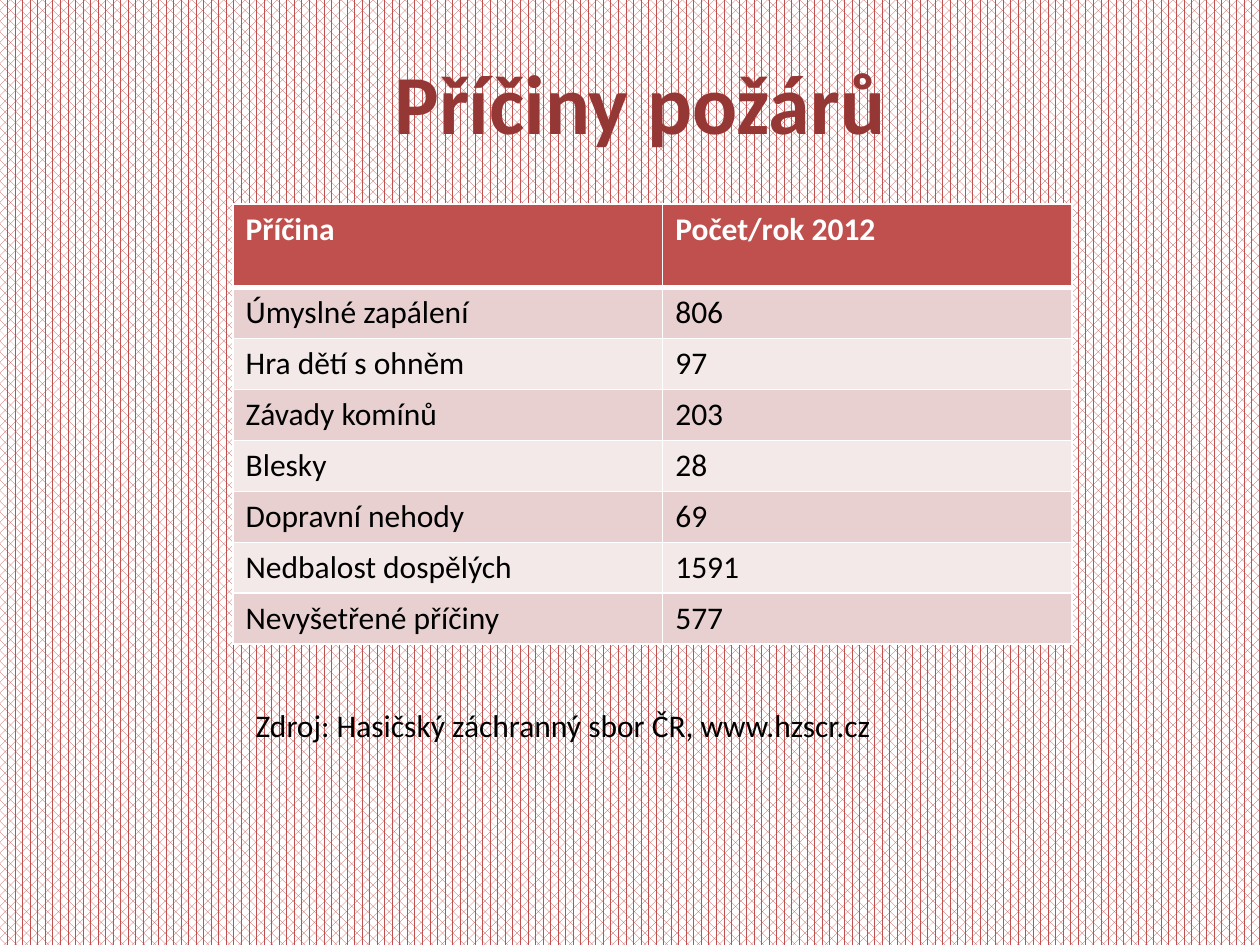
from dataclasses import dataclass

from lxml.etree import SubElement
from pptx import Presentation
from pptx.dml.color import RGBColor as RGB
from pptx.enum.dml import MSO_PATTERN as PATTERN
from pptx.enum.text import MSO_ANCHOR as ANCHOR, PP_ALIGN as ALIGN
from pptx.oxml.ns import qn
from pptx.util import Inches, Pt


@dataclass(frozen=True)
class Theme:
    font: str = "Calibri"
    title_size: int = 48
    body_size: int = 18
    title: str = "953735"
    accent: str = "C0504D"
    bands: tuple = ("E8D0D0", "F4E9E9")
    light: str = "FFFFFF"
    ink: str = "000000"


theme = Theme()


def write(frame, text, size=theme.body_size, color=theme.ink, bold=False,
          align=ALIGN.LEFT, anchor=ANCHOR.TOP):
    frame.word_wrap = True
    frame.vertical_anchor = anchor
    paragraph = frame.paragraphs[0]
    paragraph.alignment = align
    run = paragraph.add_run()
    run.text = text
    run.font.name = theme.font
    run.font.size = Pt(size)
    run.font.bold = bold
    run.font.color.rgb = RGB.from_string(color)


def paint_cell(cell, color, bottom_width):
    cell_format = cell._tc.get_or_add_tcPr()
    for edge, width in (("lnL", 1), ("lnR", 1), ("lnT", 1), ("lnB", bottom_width)):
        line = SubElement(cell_format, qn(f"a:{edge}"), w=str(Pt(width)))
        line_fill = SubElement(line, qn("a:solidFill"))
        SubElement(line_fill, qn("a:srgbClr"), val=theme.light)
    cell.fill.solid()
    cell.fill.fore_color.rgb = RGB.from_string(color)


deck = Presentation()
deck.slide_width, deck.slide_height = Inches(10), Inches(7.5)
W, H = deck.slide_width / 100, deck.slide_height / 100
slide = deck.slides.add_slide(deck.slide_layouts[6])

backdrop = slide.background.fill
backdrop.patterned()
backdrop.pattern = PATTERN.PERCENT_60
backdrop.fore_color.rgb = RGB.from_string(theme.accent)
backdrop.back_color.rgb = RGB.from_string(theme.light)

heading = slide.shapes.add_textbox(int(8.3 * W), int(3.9 * H), int(85 * W), int(13.6 * H))
write(heading.text_frame, "Příčiny požárů", size=theme.title_size, color=theme.title,
      bold=True, align=ALIGN.CENTER, anchor=ANCHOR.MIDDLE)

fire_causes = [
    ("Příčina", "Počet/rok 2012"),
    ("Úmyslné zapálení", "806"),
    ("Hra dětí s ohněm", "97"),
    ("Závady komínů", "203"),
    ("Blesky", "28"),
    ("Dopravní nehody", "69"),
    ("Nedbalost dospělých", "1591"),
    ("Nevyšetřené příčiny", "577"),
]
column_shares = (34.1, 32.5)
header_share, row_share = 8.8, 5.4
causes = slide.shapes.add_table(
    len(fire_causes), len(column_shares), int(18.5 * W), int(21.6 * H),
    int(sum(column_shares) * W),
    int((header_share + row_share * (len(fire_causes) - 1)) * H)).table

for column, share in zip(causes.columns, column_shares):
    column.width = int(share * W)

for index, entry in enumerate(fire_causes):
    header = index == 0
    causes.rows[index].height = int((header_share if header else row_share) * H)
    for cell, text in zip(causes.rows[index].cells, entry):
        paint_cell(cell, theme.accent if header else theme.bands[(index - 1) % 2],
                   3 if header else 1)
        write(cell.text_frame, text, color=theme.light if header else theme.ink, bold=header)

citation = slide.shapes.add_textbox(int(19.3 * W), int(74.1 * H), int(66.1 * W), int(5.4 * H))
write(citation.text_frame, "Zdroj: Hasičský záchranný sbor ČR, www.hzscr.cz")

deck.save("out.pptx")
